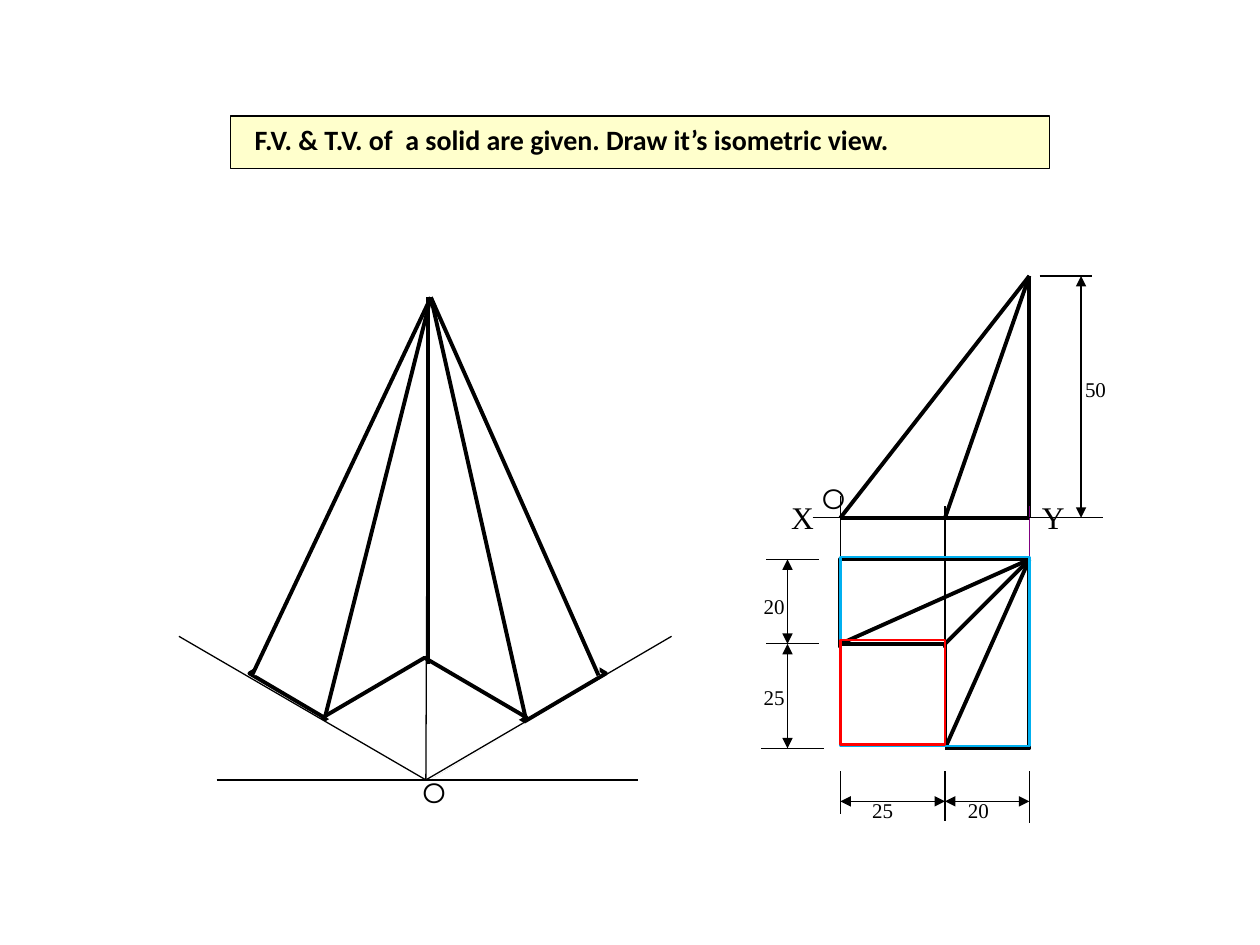
from lxml import etree
from pptx import Presentation
from pptx.dml.color import RGBColor
from pptx.enum.shapes import MSO_CONNECTOR, MSO_SHAPE
from pptx.enum.text import MSO_ANCHOR, MSO_AUTO_SIZE, PP_ALIGN
from pptx.oxml.ns import qn
from pptx.util import Inches, Pt

STRAIGHT = MSO_CONNECTOR.STRAIGHT
RECTANGLE, DIAMOND = MSO_SHAPE.RECTANGLE, MSO_SHAPE.DIAMOND
TOP, LEFT_ALIGN, CENTER = MSO_ANCHOR.TOP, PP_ALIGN.LEFT, PP_ALIGN.CENTER
NO_FIT, FIT_SHAPE = MSO_AUTO_SIZE.NONE, MSO_AUTO_SIZE.SHAPE_TO_FIT_TEXT

BLACK = RGBColor(0x00, 0x00, 0x00)
WHITE = RGBColor(0xFF, 0xFF, 0xFF)
CREAM = RGBColor(0xFF, 0xFF, 0xCC)
PURPLE = RGBColor(0x80, 0x00, 0x80)
BLUE = RGBColor(0x00, 0xB0, 0xF0)
RED = RGBColor(0xFF, 0x00, 0x00)

COLUMNS, ROWS = 100, 75
THIN, MEDIUM, THICK = 0.75, 1.5, 2.25
SERIF, SANS, ROUND = "Times New Roman", "Calibri", "Montserrat"


def write_text(frame, text, size=12, font=SERIF, color=BLACK, bold=False, align=CENTER):
    """Put one formatted paragraph into a text frame."""
    paragraph = frame.paragraphs[0]
    paragraph.alignment = align
    run = paragraph.add_run()
    run.text = text
    run.font.size, run.font.name = Pt(size), font
    run.font.bold, run.font.color.rgb = bold, color


class Drawing:
    """Draw styled elements on a slide divided into a grid."""

    def __init__(self, presentation):
        """Start a title-only slide and measure its grid."""
        self.slide = presentation.slides.add_slide(presentation.slide_layouts[5])
        self.column = presentation.slide_width / COLUMNS
        self.row = presentation.slide_height / ROWS

    def place(self, x, y):
        """Turn columns and rows into slide lengths."""
        return round(x * self.column), round(y * self.row)

    def paint(self, shape, fill, line, width):
        """Set the fill and outline, where None means none."""
        if fill is None:
            shape.fill.background()
        else:
            shape.fill.solid()
            shape.fill.fore_color.rgb = fill
        if line is None:
            shape.line.fill.background()
        else:
            shape.line.color.rgb = line
            shape.line.width = Pt(width)

    def title(self, text, x, y, width, height):
        """Place the title as a filled banner."""
        title = self.slide.shapes.title
        title.left, title.top = self.place(x, y)
        title.width, title.height = self.place(width, height)
        self.paint(title, CREAM, BLACK, THIN)
        frame = title.text_frame
        frame.auto_size, frame.vertical_anchor = NO_FIT, TOP
        frame.margin_left = self.place(1.9, 0)[0]
        write_text(frame, text, size=16, font=SANS, bold=True, align=LEFT_ALIGN)

    def shape(self, kind, x, y, width, height, fill=WHITE, line=None, weight=THICK):
        """Add a preset shape."""
        shape = self.slide.shapes.add_shape(kind, *self.place(x, y), *self.place(width, height))
        shape.shadow.inherit = False
        self.paint(shape, fill, line, weight)

    def line(self, start, end, weight=THIN, color=BLACK, arrows=False):
        """Add a straight line, with arrowheads at both ends on request."""
        connector = self.slide.shapes.add_connector(STRAIGHT, *self.place(*start), *self.place(*end))
        connector.line.color.rgb = color
        connector.line.width = Pt(weight)
        properties = connector._element.spPr
        if arrows:
            outline = properties.find(qn("a:ln"))
            for end_name in ("a:headEnd", "a:tailEnd"):
                etree.SubElement(outline, qn(end_name), type="triangle")
        etree.SubElement(properties, qn("a:effectLst"))

    def label(self, text, x, y, width=3.7, height=3, **text_format):
        """Add a one-line label that does not wrap."""
        box = self.slide.shapes.add_textbox(*self.place(x, y), *self.place(width, height))
        box.text_frame.word_wrap = False
        box.text_frame.auto_size = FIT_SHAPE
        write_text(box.text_frame, text, **text_format)


def draw_isometric_view(drawing):
    """Draw the solid on its isometric axes."""
    apex, origin = (34.2, 23.6), (33.8, 61.9)
    drawing.shape(DIAMOND, 19.8, 45.1, 28.3, 16.7, line=BLACK)
    drawing.shape(RECTANGLE, 20.1, 43.6, 27.5, 10)
    drawing.shape(DIAMOND, 25.6, 52.2, 16.2, 9.5, line=BLACK)
    drawing.line((34, 45.2), (34, 23.6))
    for corner in ((20, 53.6), (25.8, 56.9), (41.7, 56.9), (47.5, 53.6)):
        drawing.line(apex, corner, THICK)
    drawing.line((34, 23.6), (34, 52.7), THICK)
    drawing.shape(DIAMOND, 25.5, 52.7, 16.2, 9.5)
    for end in ((53.3, 50.5), (14.2, 50.5), (33.9, 38.6)):
        drawing.line(origin, end)
    drawing.line((17.2, 61.9), (50.6, 61.9))
    drawing.label("O", 32.5, 61.1, 3.9, 3.7, size=16, font=ROUND)


def draw_given_views(drawing):
    """Draw the front view, the top view and their dimensions."""
    left, middle, right = 66.7, 75, 81.7
    apex, base = 21.9, 41.1
    back, step, front = 44.4, 51.1, 59.4
    side, notch = right - left, middle - left

    drawing.shape(RECTANGLE, left, back, side, side, line=BLACK)
    drawing.shape(RECTANGLE, left, step, notch, notch, line=BLACK)
    for corner in ((left, step), (middle, step), (middle, front)):
        drawing.line(corner, (right, back), THICK)
    drawing.shape(RECTANGLE, 65.8, 51.4, 9.2, 9.2)

    for x in (left, middle, right):
        drawing.line((right, apex), (x, base), THICK)
    for x, low, high, color in ((middle, 51.9, 40.2, BLACK), (left, step, 39.4, BLACK),
                                (right, 49.4, 40.2, PURPLE)):
        drawing.line((x, low), (x, high), color=color)
    drawing.line((64.5, base), (82.5, base))
    for text, x in (("X", 61.8), ("Y", right)):
        drawing.label(text, x, 39, 3.8, 4, size=18)
    drawing.line((left, base), (right, base), THICK)

    for y, start, end in ((apex, 82.5, 86.7), (base, right, 87.5), (back, 60.8, 65),
                          (step, 60.8, 65), (front, 60.4, 65.4)):
        drawing.line((start, y), (end, y))
    for x, end in ((left, 64.6), (middle, 65.2), (right, 65.3)):
        drawing.line((x, 61.2), (x, end))

    across, down, tall = 63.6, 62.5, 85.8
    for start, end, text, x, y in (
        ((down, back), (down, step), "20", 59.6, 46.6),
        ((down, step), (down, front), "25", 59.6, 53.8),
        ((left, across), (middle, across), "25", 68.2, 62.8),
        ((middle, across), (right, across), "20", 75.8, 62.8),
        ((tall, apex), (tall, base), "50", 85.1, 29.4),
    ):
        drawing.line(start, end, arrows=True)
        drawing.label(text, x, y)

    drawing.label("O", 64.2, 37.7, 3.9, 3.7, size=16, font=ROUND)
    drawing.shape(RECTANGLE, left, back - 0.2, side, side, None, BLUE, MEDIUM)
    drawing.shape(RECTANGLE, left, step - 0.3, notch, notch, None, RED, MEDIUM)


def main():
    """Build and save the slide."""
    presentation = Presentation()
    presentation.slide_width, presentation.slide_height = Inches(10), Inches(7.5)
    drawing = Drawing(presentation)
    drawing.title("F.V. & T.V. of  a solid are given. Draw it’s isometric view.", 18.3, 9.2, 65, 4.2)
    draw_isometric_view(drawing)
    draw_given_views(drawing)
    presentation.save("out.pptx")


if __name__ == "__main__":
    main()
